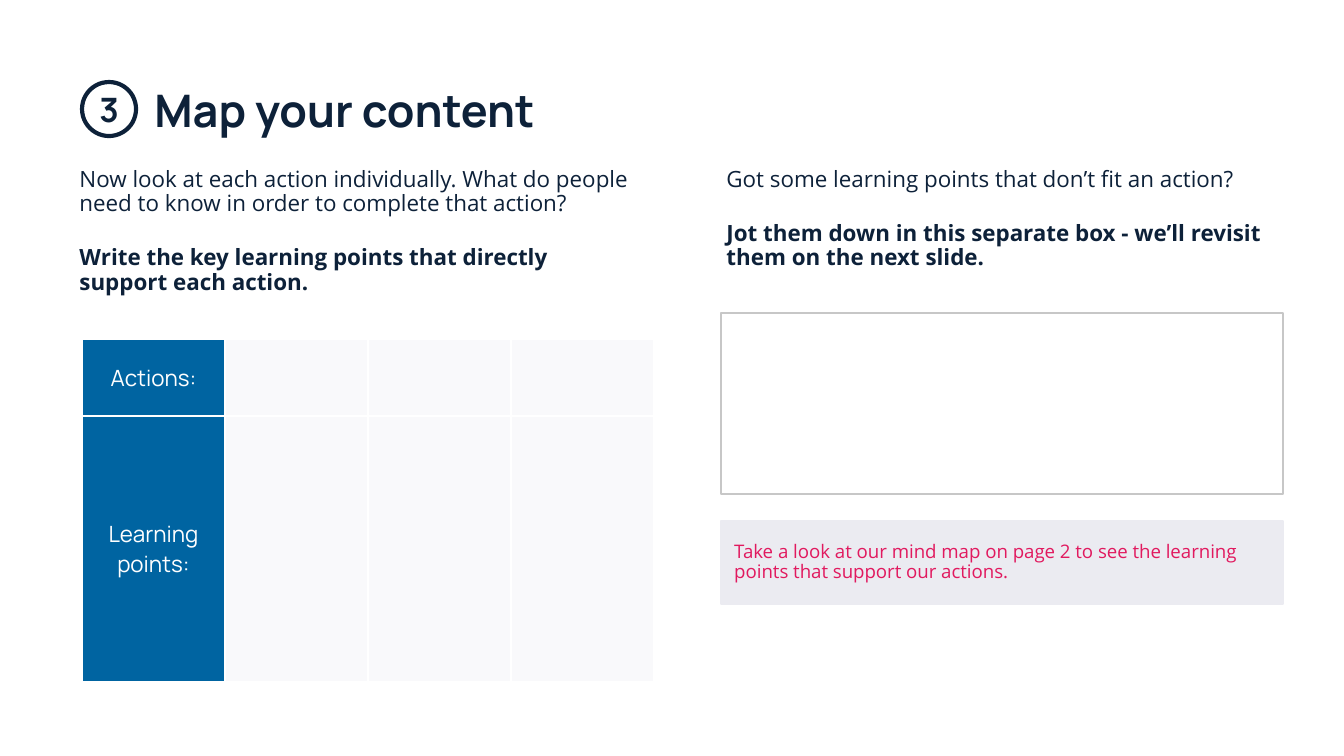
from pptx import Presentation
from pptx import util as u
from pptx.dml.color import RGBColor
from pptx.enum import shapes, text
from pptx.oxml import parse_xml
from pptx.oxml.ns import nsdecls

PX = 914400 / 134.4
NAVY = RGBColor(0x0D, 0x21, 0x39)
BLUE = RGBColor(0x00, 0x64, 0xA1)
PINK = RGBColor(0xE1, 0x19, 0x5F)
PALE = RGBColor(0xF9, 0xF9, 0xFB)
LILAC = RGBColor(0xEB, 0xEB, 0xF1)
GREY = RGBColor(0xC7, 0xC7, 0xC7)
WHITE = RGBColor(0xFF, 0xFF, 0xFF)
HEAD, BODY = "Manrope", "Open Sans"
TOP, MID = text.MSO_ANCHOR.TOP, text.MSO_ANCHOR.MIDDLE
LEFT, CENTER = text.PP_ALIGN.LEFT, text.PP_ALIGN.CENTER
PAD = u.Inches(0.1)


def px(n):
    return round(n * PX)


def apply(obj, **vals):
    for key, val in vals.items():
        setattr(obj, key, val)


def place(shape, x, y, w, h):
    apply(shape, left=px(x), top=px(y), width=px(w), height=px(h))


def setup(frame, anchor=TOP):
    apply(frame, word_wrap=True, auto_size=text.MSO_AUTO_SIZE.NONE,
          vertical_anchor=anchor, margin_left=PAD, margin_right=PAD,
          margin_top=PAD, margin_bottom=PAD)


def write(para, words, face, size, color, bold=False, align=LEFT, gap=0,
          pitch=1.0):
    para.text = words
    apply(para, alignment=align, space_before=u.Pt(gap), space_after=u.Pt(0),
          line_spacing=pitch)
    font = para.runs[0].font
    apply(font, name=face, size=u.Pt(size), bold=bold)
    font.color.rgb = color


def intro(holder, x, lead, task):
    """Plain lead line with a bold task below it."""
    place(holder, x, 155, 589, 168)
    frame = holder.text_frame
    setup(frame)
    for i, words in enumerate((lead, task)):
        para = frame.paragraphs[0] if i == 0 else frame.add_paragraph()
        props = para._p.get_or_add_pPr()
        props.set("marL", "0")
        props.set("indent", "0")
        props.append(parse_xml(f"<a:buNone {nsdecls('a')}/>"))
        write(para, words, BODY, 12, NAVY, bold=i == 1, gap=16 * i, pitch=0.9)


def panel(slide, kind, box, fill, line, weight):
    shape = slide.shapes.add_shape(kind, *map(px, box))
    shape.shadow.inherit = False
    if fill is None:
        shape.fill.background()
    else:
        shape.fill.solid()
        shape.fill.fore_color.rgb = fill
    shape.line.color.rgb = line
    shape.line.width = u.Pt(weight)
    return shape


def border(cell):
    props = cell._tc.get_or_add_tcPr()
    for i, side in enumerate(("lnL", "lnR", "lnT", "lnB")):
        props.insert(i, parse_xml(
            f'<a:{side} {nsdecls("a")} w="9525"><a:solidFill>'
            f'<a:srgbClr val="{WHITE}"/></a:solidFill></a:{side}>'))


def grid(slide, x, y, col, rows, cols):
    """Blue label column followed by empty pale cells."""
    high = sum(h for _, h in rows)
    table = slide.shapes.add_table(len(rows), cols, px(x), px(y),
                                   px(col * cols), px(high)).table
    apply(table, first_row=False, horz_banding=False)
    for c in table.columns:
        c.width = px(col)
    for r, (label, h) in enumerate(rows):
        table.rows[r].height = px(h)
        for c in range(cols):
            cell = table.cell(r, c)
            cell.fill.solid()
            cell.fill.fore_color.rgb = PALE if c else BLUE
            border(cell)
        cell = table.cell(r, 0)
        apply(cell, vertical_anchor=MID, margin_left=PAD, margin_right=PAD,
              margin_top=PAD, margin_bottom=PAD)
        write(cell.text_frame.paragraphs[0], label, HEAD, 12, WHITE,
              align=CENTER)


def main():
    deck = Presentation()
    apply(deck, slide_width=px(1344), slide_height=px(756))
    slide = deck.slides.add_slide(deck.slide_layouts[3])
    title, left, right = list(slide.placeholders)[:3]

    # Title and step number
    place(title, 141, 69, 1048, 80)
    setup(title.text_frame)
    write(title.text_frame.paragraphs[0], "Map your content", HEAD, 24, NAVY,
          bold=True)
    panel(slide, shapes.MSO_SHAPE.OVAL, (82, 82, 54, 54), None, NAVY, 2.25)
    step = slide.shapes.add_textbox(px(82), px(75), px(54), px(54))
    setup(step.text_frame)
    write(step.text_frame.paragraphs[0], "3", HEAD, 18, NAVY, bold=True,
          align=CENTER)

    # Left column: actions and their learning points
    intro(left, 66,
          "Now look at each action individually. What do people need to know "
          "in order to complete that action?",
          "Write the key learning points that directly support each action.")
    grid(slide, 82, 339, 143, [("Actions:", 77), ("Learning points:", 266)], 4)

    # Right column: spare points box and hint
    intro(right, 713,
          "Got some learning points that don’t fit an action?",
          "Jot them down in this separate box - we’ll revisit them on the "
          "next slide.")
    rect = shapes.MSO_SHAPE.RECTANGLE
    panel(slide, rect, (721, 313, 562, 181), WHITE, GREY, 0.75)
    hint = panel(slide, rect, (721, 521, 562, 83), LILAC, LILAC, 0.75)
    setup(hint.text_frame, MID)
    write(hint.text_frame.paragraphs[0],
          "Take a look at our mind map on page 2 to see the learning points "
          "that support our actions.", BODY, 10, PINK, pitch=0.9)

    deck.save("out.pptx")


if __name__ == "__main__":
    main()
